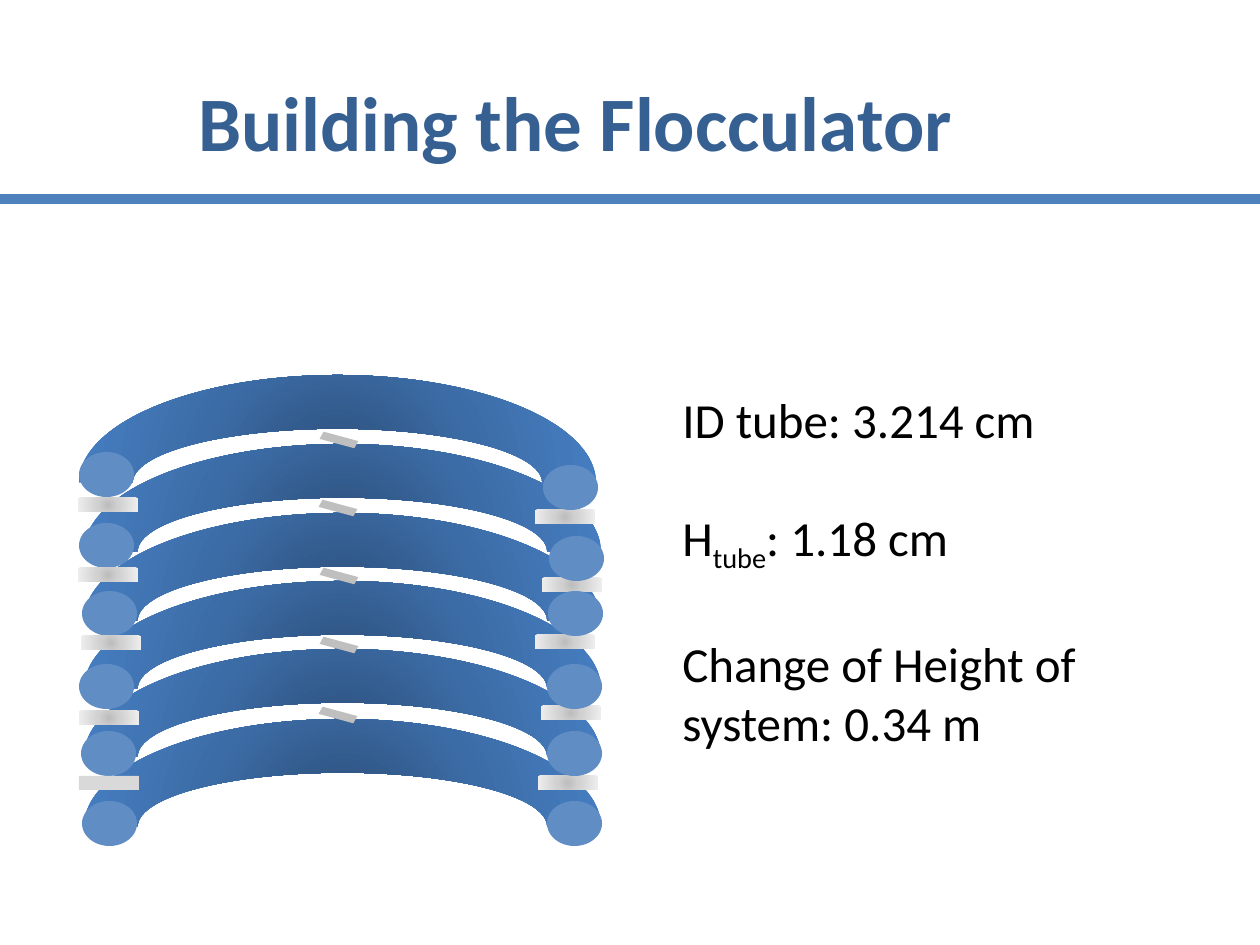
from dataclasses import dataclass

from lxml.etree import SubElement
from pptx import Presentation
from pptx.dml.color import RGBColor
from pptx.enum.shapes import MSO_CONNECTOR, MSO_SHAPE
from pptx.enum.text import MSO_AUTO_SIZE
from pptx.oxml import parse_xml
from pptx.oxml.ns import nsdecls, qn
from pptx.util import Emu, Pt

PX_PER_INCH = 126


@dataclass(frozen=True)
class Theme:
    font: str = "Calibri"
    title_size: int = 44
    body_size: int = 28
    title: str = "376092"
    body: str = "000000"
    rule: str = "4F81BD"
    tube_end: str = "608DC4"
    marker: str = "BFBFBF"
    flat_clamp: str = "D9D9D9"
    coil: tuple = ((0, "2A4C75"), (50, "3C6CA6"), (100, "4780C5"))
    clamp: tuple = ((0, "BDBDBD"), (35, "D1D1D1"), (100, "EEEEEE"))


THEME = Theme()

# Sizes and places in px, from top to bottom of the coil unless noted
COIL_SIZE = (517, 215)
COILS = [(84, 444), (84, 513), (79, 375), (84, 581), (84, 649), (84, 719)]  # back to front
END_SIZE = (55, 45)
LEFT_ENDS = [(79, 452), (79, 523), (82, 591), (79, 664), (81, 731), (82, 801)]
RIGHT_ENDS = [(543, 465), (549, 536), (548, 591), (547, 664), (547, 731), (547, 801)]
CLAMP_SIZE = (60, 14)
LEFT_CLAMPS = [(78, 498), (78, 568), (81, 636), (79, 711)]
FLAT_CLAMP = (79, 776)
RIGHT_CLAMPS = [(535, 510), (542, 578), (535, 635), (541, 706), (538, 776)]
MARKER_SIZE = (38, 8)
MARKERS = [(320, 436), (319, 504), (320, 572), (320, 641), (319, 711)]
MARKER_TILT = 15.1


def px(length):
    return Emu(round(length * 914400 / PX_PER_INCH))


def radial_fill(shape, stops):
    """Gradient that runs from the centre of the shape outwards."""
    gradient = parse_xml(f'<a:gradFill {nsdecls("a")} rotWithShape="1"/>')
    stop_list = SubElement(gradient, qn("a:gsLst"))
    for position, color in stops:
        stop = SubElement(stop_list, qn("a:gs"), pos=str(position * 1000))
        SubElement(stop, qn("a:srgbClr"), val=color)
    circle = SubElement(gradient, qn("a:path"), path="circle")
    SubElement(circle, qn("a:fillToRect"), dict.fromkeys("ltrb", "50000"))
    shape._element.spPr.find(qn("a:prstGeom")).addnext(gradient)


def add_parts(group, kind, size, places, fill, rotation=0):
    """One shape of the same kind, size and fill at each place."""
    for place in places:
        part = group.shapes.add_shape(kind, *map(px, place + size))
        part.shadow.inherit = False
        part.line.fill.background()
        part.rotation = rotation
        if isinstance(fill, tuple):
            radial_fill(part, fill)
        else:
            part.fill.solid()
            part.fill.fore_color.rgb = RGBColor.from_string(fill)


def add_rule(slide, y, width):
    rule = slide.shapes.add_connector(MSO_CONNECTOR.STRAIGHT, 0, px(y), px(width), px(y))
    rule.line.color.rgb = RGBColor.from_string(THEME.rule)
    rule.line.width = Pt(6)
    SubElement(rule._element.spPr, qn("a:effectLst"))


def add_text(slide, box, paragraphs, color, gap=0, **font_format):
    """Each paragraph is a list of (text, baseline percent) runs."""
    frame = slide.shapes.add_textbox(*map(px, box)).text_frame
    frame.word_wrap = True
    frame.auto_size = MSO_AUTO_SIZE.SHAPE_TO_FIT_TEXT
    for index, runs in enumerate(paragraphs):
        paragraph = frame.add_paragraph() if index else frame.paragraphs[0]
        paragraph.space_before = Pt(gap if index else 0)
        for text, baseline in runs:
            run = paragraph.add_run()
            run.text = text
            for name, value in font_format.items():
                setattr(run.font, name, value)
            run.font.color.rgb = RGBColor.from_string(color)
            if baseline:
                run._r.get_or_add_rPr().set("baseline", str(baseline * 1000))


def add_flocculator(slide):
    coil = slide.shapes.add_group_shape()
    add_parts(coil, MSO_SHAPE.BLOCK_ARC, COIL_SIZE, COILS, THEME.coil)
    # Left side, with the clamps over the tube ends
    add_parts(coil, MSO_SHAPE.OVAL, END_SIZE, LEFT_ENDS, THEME.tube_end)
    add_parts(coil, MSO_SHAPE.RECTANGLE, CLAMP_SIZE, LEFT_CLAMPS, THEME.clamp)
    add_parts(coil, MSO_SHAPE.RECTANGLE, CLAMP_SIZE, [FLAT_CLAMP], THEME.flat_clamp)
    # Spacers at the back of the coil
    add_parts(coil, MSO_SHAPE.PARALLELOGRAM, MARKER_SIZE, MARKERS, THEME.marker, MARKER_TILT)
    # Right side, with the tube ends over the clamps
    add_parts(coil, MSO_SHAPE.RECTANGLE, CLAMP_SIZE, RIGHT_CLAMPS, THEME.clamp)
    add_parts(coil, MSO_SHAPE.OVAL, END_SIZE, reversed(RIGHT_ENDS), THEME.tube_end)


def main():
    presentation = Presentation()
    presentation.slide_width, presentation.slide_height = px(1260), px(945)
    slide = presentation.slides.add_slide(presentation.slide_layouts[6])

    add_rule(slide, 199, 1260)
    add_flocculator(slide)

    # Title and tube dimensions
    add_text(slide, (186, 68, 892, 106), [[("Building the Flocculator", 0)]],
             THEME.title, name=THEME.font, size=Pt(THEME.title_size), bold=True)
    dimensions = [
        [("ID tube: 3.214 cm", 0)],
        [("H", 0), ("tube", -25), (": 1.18 cm", 0)],
        [("Change of Height of system: 0.34 m", 0)],
    ]
    add_text(slide, (670, 383, 527, 369), dimensions, THEME.body, gap=34,
             name=THEME.font, size=Pt(THEME.body_size))

    presentation.save("out.pptx")


if __name__ == "__main__":
    main()
